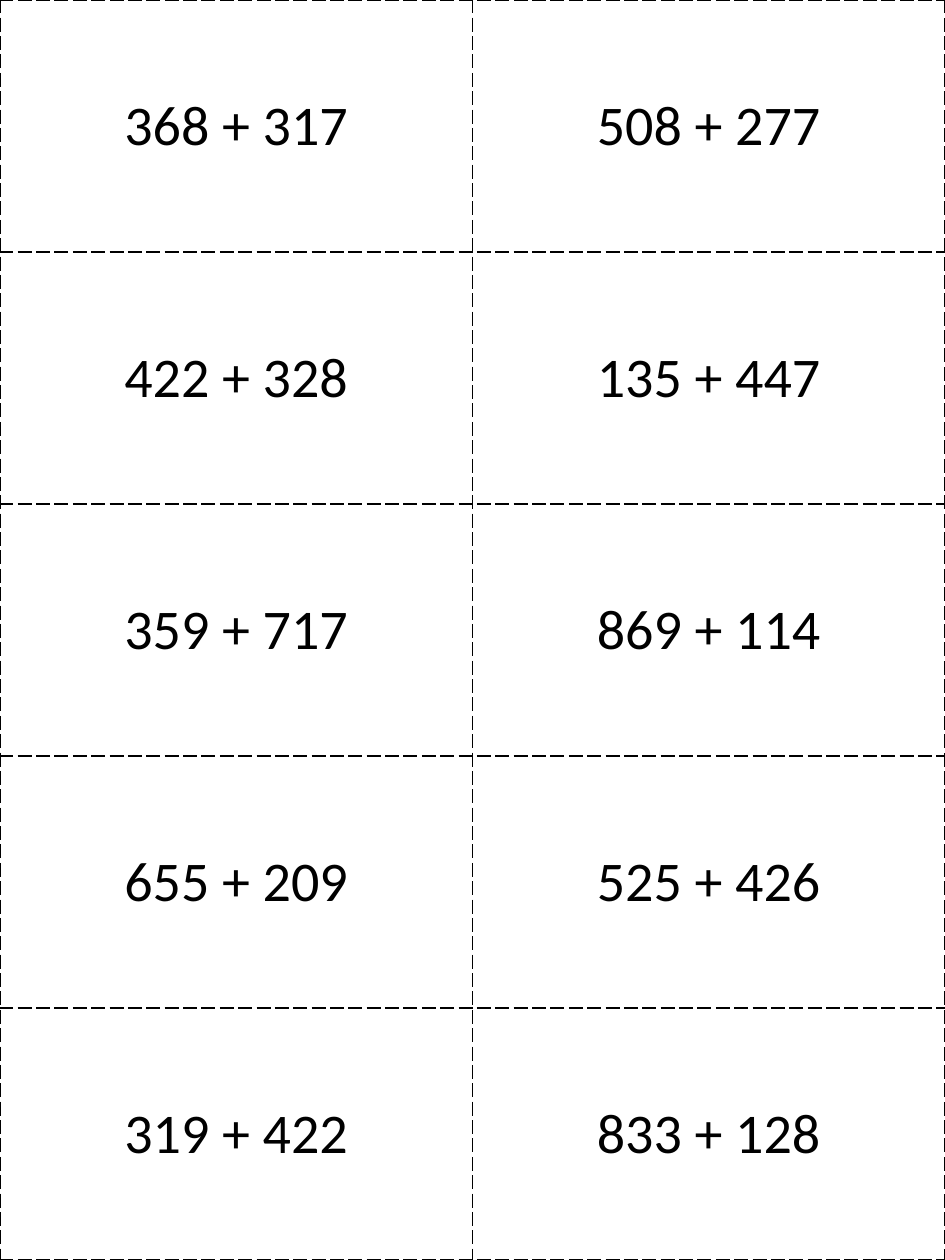
from lxml import etree
from pptx import Presentation
from pptx import util as u
from pptx.dml.color import RGBColor
from pptx.enum import text
from pptx.oxml.ns import qn

COLORS = {"ink": "000000", "paper": "FFFFFF"}
SUMS = [
    ("368 + 317", "508 + 277"),
    ("422 + 328", "135 + 447"),
    ("359 + 717", "869 + 114"),
    ("655 + 209", "525 + 426"),
    ("319 + 422", "833 + 128"),
]
WIDTH, HEIGHT = 7.5, 10


def write(cell, content, size=32, font="Calibri", color="ink"):
    cell.vertical_anchor = text.MSO_ANCHOR.MIDDLE
    p = cell.text_frame.paragraphs[0]
    p.alignment = text.PP_ALIGN.CENTER
    r = p.add_run()
    r.text = content
    r.font.size = u.Pt(size)
    r.font.name = font
    r.font.color.rgb = RGBColor.from_string(COLORS[color])


def add_borders(cell, width=1, dash="lgDash", color="ink"):
    tc_pr = cell._tc.get_or_add_tcPr()
    for side in ("lnL", "lnR", "lnT", "lnB"):
        ln = etree.SubElement(tc_pr, qn(f"a:{side}"), w=str(u.Pt(width)))
        fill = etree.SubElement(ln, qn("a:solidFill"))
        etree.SubElement(fill, qn("a:srgbClr"), val=COLORS[color])
        etree.SubElement(ln, qn("a:prstDash"), val=dash)


prs = Presentation()
prs.slide_width = u.Inches(WIDTH)
prs.slide_height = u.Inches(HEIGHT)
s = prs.slides.add_slide(prs.slide_layouts[6])

# Sheet of cards filling the page
rows, cols = len(SUMS), len(SUMS[0])
table = s.shapes.add_table(rows, cols, 0, 0, u.Inches(WIDTH), u.Inches(HEIGHT)).table
table.first_row = False
table.horz_banding = False
for col in table.columns:
    col.width = u.Inches(WIDTH / cols)
for row in table.rows:
    row.height = u.Inches(HEIGHT / rows)

# One sum per card, with dashed cutting lines
for i, pair in enumerate(SUMS):
    for j, content in enumerate(pair):
        cell = table.cell(i, j)
        write(cell, content)
        add_borders(cell)
        cell.fill.solid()
        cell.fill.fore_color.rgb = RGBColor.from_string(COLORS["paper"])

prs.save("out.pptx")
